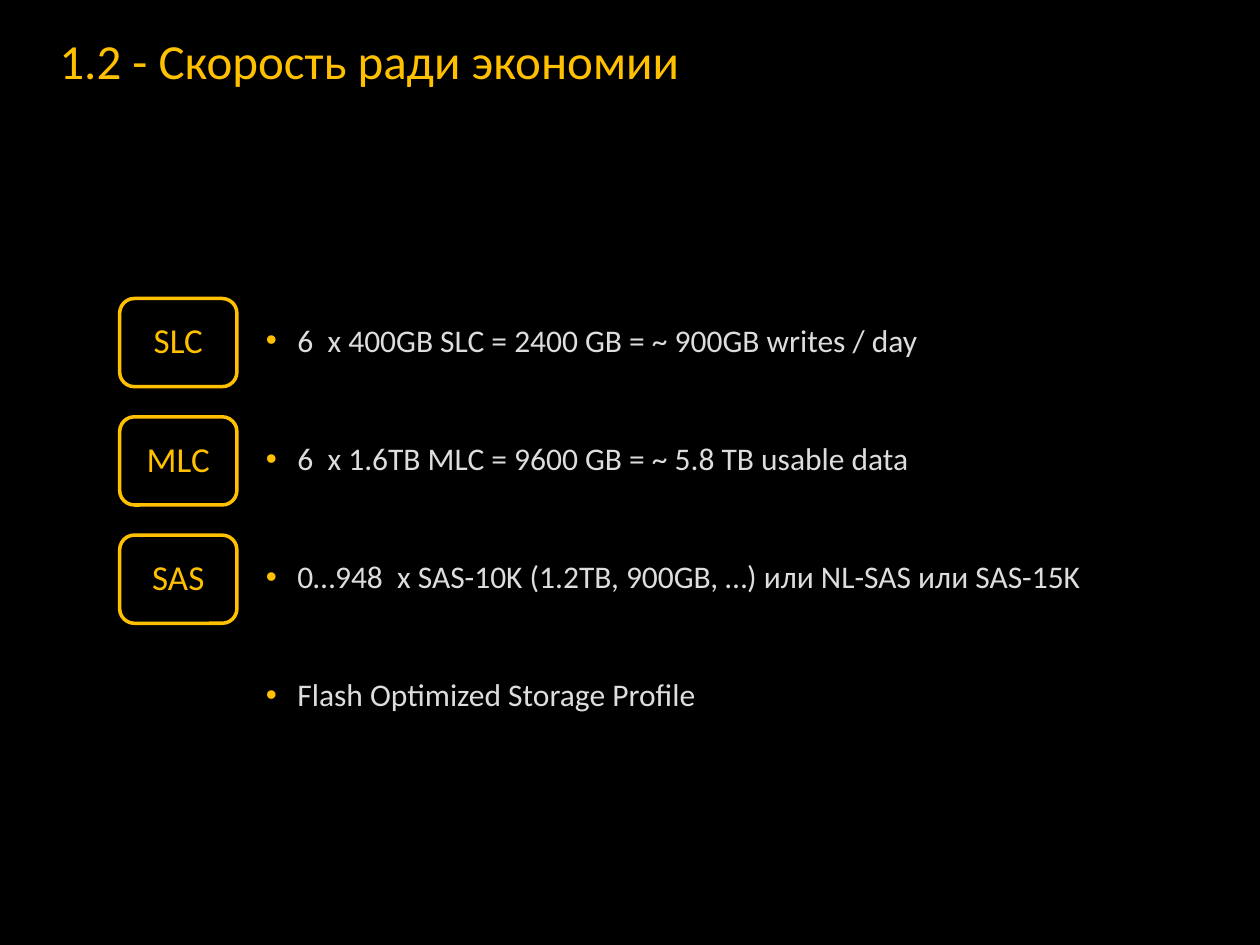
from dataclasses import dataclass

from lxml.etree import SubElement
from pptx import Presentation
from pptx.dml.color import RGBColor
from pptx.enum.shapes import MSO_SHAPE as Shape
from pptx.enum.text import MSO_ANCHOR as Anchor, MSO_AUTO_SIZE as AutoSize, PP_ALIGN as Align
from pptx.oxml.ns import qn
from pptx.util import Pt


@dataclass(frozen=True)
class Theme:
    font: str = "Calibri"
    background: RGBColor = RGBColor(0x00, 0x00, 0x00)
    accent: RGBColor = RGBColor(0xFF, 0xC0, 0x00)
    body: RGBColor = RGBColor(0xDD, 0xDD, 0xDD)
    title_size: float = 28
    label_size: float = 20
    body_size: float = 18


@dataclass(frozen=True)
class Tier:
    text: str
    label: str = ""
    text_width: float = 504


THEME = Theme()
TIERS = [
    Tier("6  x 400GB SLC = 2400 GB = ~ 900GB writes / day", "SLC"),
    Tier("6  x 1.6TB MLC = 9600 GB = ~ 5.8 TB usable data", "MLC"),
    Tier("0…948  x SAS-10K (1.2TB, 900GB, …) или NL-SAS или SAS-15K", "SAS", 551.5),
    Tier("Flash Optimized Storage Profile", text_width=551.5),
]
FIRST_ROW_TOP, ROW_PITCH = 170.6, 67.6
LABEL_LEFT, LABEL_WIDTH, LABEL_HEIGHT = 68.4, 67, 50.4
TEXT_LEFT, TEXT_HEIGHT, TEXT_OFFSET = 152, 26.6, 11.5
BULLET_INDENT = 18


def add_bullet(p, color: RGBColor) -> None:
    pPr = p._p.get_or_add_pPr()
    pPr.set("marL", str(Pt(BULLET_INDENT)))
    pPr.set("indent", str(-Pt(BULLET_INDENT)))
    SubElement(SubElement(pPr, qn("a:buClr")), qn("a:srgbClr"), val=str(color))
    SubElement(pPr, qn("a:buFont"), typeface="Arial")
    SubElement(pPr, qn("a:buChar"), char="•")


def write(sp, text: str, *, size: float, color: RGBColor, align=Align.LEFT,
          anchor=Anchor.MIDDLE, margin: float = 0, bullet: bool = False) -> None:
    tf = sp.text_frame
    tf.word_wrap = True
    tf.auto_size = AutoSize.NONE
    tf.vertical_anchor = anchor
    tf.margin_left = tf.margin_right = tf.margin_top = tf.margin_bottom = Pt(margin)
    p = tf.paragraphs[0]
    p.alignment = align
    p.line_spacing = 0.9
    if bullet:
        add_bullet(p, THEME.accent)
    r = p.add_run()
    r.text = text
    r.font.name = THEME.font
    r.font.size = Pt(size)
    r.font.color.rgb = color


def add_title(slide, text: str) -> None:
    sp = slide.shapes.title
    sp.left, sp.top, sp.width, sp.height = Pt(34), Pt(21), Pt(686), Pt(59)
    write(sp, text, size=THEME.title_size, color=THEME.accent, anchor=Anchor.TOP)


def add_label(slide, text: str, top: float) -> None:
    sp = slide.shapes.add_shape(Shape.ROUNDED_RECTANGLE, Pt(LABEL_LEFT), Pt(top),
                                Pt(LABEL_WIDTH), Pt(LABEL_HEIGHT))
    sp.shadow.inherit = False
    sp.fill.solid()
    sp.fill.fore_color.rgb = THEME.background
    sp.line.color.rgb = THEME.accent
    sp.line.width = Pt(2)
    write(sp, text, size=THEME.label_size, color=THEME.accent,
          align=Align.CENTER, margin=3.6)


def add_tier(slide, tier: Tier, top: float) -> None:
    if tier.label:
        add_label(slide, tier.label, top)
    sp = slide.shapes.add_textbox(Pt(TEXT_LEFT), Pt(top + TEXT_OFFSET),
                                  Pt(tier.text_width), Pt(TEXT_HEIGHT))
    write(sp, tier.text, size=THEME.body_size, color=THEME.body, bullet=True)


def main() -> None:
    prs = Presentation()
    prs.slide_width, prs.slide_height = Pt(720), Pt(540)
    slide = prs.slides.add_slide(prs.slide_layouts.get_by_name("Title Only"))
    slide.background.fill.solid()
    slide.background.fill.fore_color.rgb = THEME.background
    add_title(slide, "1.2 - Скорость ради экономии")
    for row, tier in enumerate(TIERS):
        add_tier(slide, tier, FIRST_ROW_TOP + row * ROW_PITCH)
    prs.save("out.pptx")


if __name__ == "__main__":
    main()
